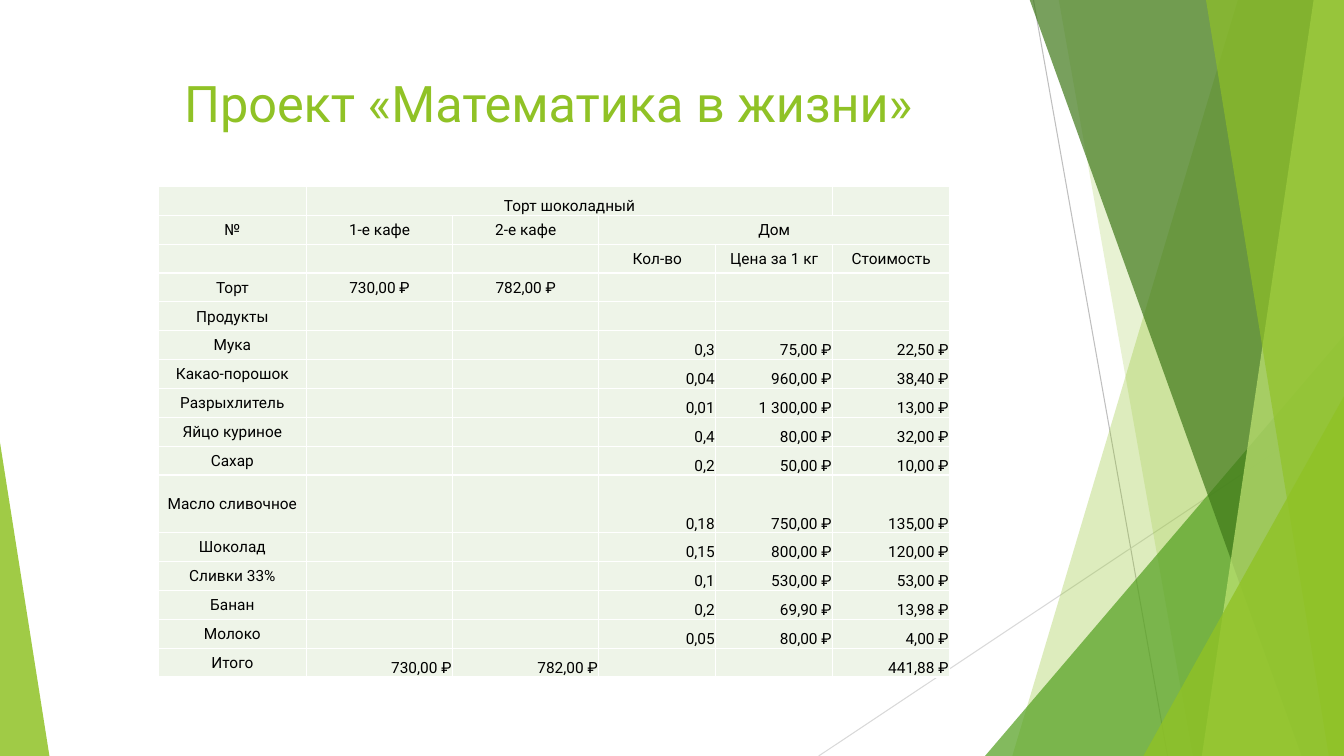
from dataclasses import dataclass

from lxml.etree import SubElement as Sub
from pptx import Presentation
from pptx.dml.color import RGBColor as RGB
from pptx.enum.shapes import MSO_CONNECTOR as Conn, MSO_SHAPE as Kind
from pptx.enum.text import MSO_ANCHOR as Anchor, PP_ALIGN as Align
from pptx.oxml.ns import qn
from pptx.util import Inches, Pt


@dataclass(frozen=True)
class Theme:
    font: str = "Roboto"
    title: int = 36
    body: int = 11
    green: str = "90C226"
    leaf: str = "54A021"
    dark: str = "3F7819"
    lime: str = "C0E474"
    cell: str = "EEF4E8"
    white: str = "FFFFFF"
    ink: str = "000000"
    gray: str = "BFBFBF"
    pale: str = "D9D9D9"


T = Theme()
WIDE, HIGH, TOP = 13.33, 7.5, -0.01

# Start, end, colour
LINES = [
    ((10.25, 0), (11.58, HIGH), T.gray),
    ((WIDE, 4.03), (8.12, HIGH), T.pale),
]
# Back to front: a band is (top x, bottom x, colour, opacity) and runs to the
# right edge; a wedge is (left, top, width, apex, colour, opacity)
DECOR = [
    (12.28, 10.04, T.green, 30),
    (10.5, 11.83, T.green, 20),
    (9.77, 3.33, 3.56, 1, T.leaf, 72),
    (10.21, 12.91, T.dark, 70),
    (13.03, 11.92, T.lime, 70),
    (11.96, 13.18, T.green, 65),
    (11.34, 3.93, 1.99, 1, T.green, 80),
    (0, 4.39, 0.49, 0, T.green, 85),
]

COLS = [1.47, 1.45, 1.45, 1.16, 1.16, 1.16]
PITCH = 4.87 / 17  # sixteen rows, one of them double
TALL = 10
FIRST = 5  # first row of goods
GOODS = [
    ("Мука", "0,3", "75,00 ₽", "22,50 ₽"),
    ("Какао-порошок", "0,04", "960,00 ₽", "38,40 ₽"),
    ("Разрыхлитель", "0,01", "1 300,00 ₽", "13,00 ₽"),
    ("Яйцо куриное", "0,4", "80,00 ₽", "32,00 ₽"),
    ("Сахар", "0,2", "50,00 ₽", "10,00 ₽"),
    ("Масло сливочное", "0,18", "750,00 ₽", "135,00 ₽"),
    ("Шоколад", "0,15", "800,00 ₽", "120,00 ₽"),
    ("Сливки 33%", "0,1", "530,00 ₽", "53,00 ₽"),
    ("Банан", "0,2", "69,90 ₽", "13,98 ₽"),
    ("Молоко", "0,05", "80,00 ₽", "4,00 ₽"),
]
ROWS = [
    ("", "Торт шоколадный", "", "", "", ""),
    ("№", "1-е кафе", "2-е кафе", "Дом", "", ""),
    ("", "", "", "Кол-во", "Цена за 1 кг", "Стоимость"),
    ("Торт", "730,00 ₽", "782,00 ₽", "", "", ""),
    ("Продукты", "", "", "", "", ""),
    *[(name, "", "", *nums) for name, *nums in GOODS],
    ("Итого", "730,00 ₽", "782,00 ₽", "", "", "441,88 ₽"),
]
SPANS = [((0, 1), (0, 4)), ((1, 3), (1, 5))]


def apply(obj, **vals):
    for key, val in vals.items():
        setattr(obj, key, val)


def write(para, text, size, color, align):
    para.alignment = align
    if not text:
        Sub(para._p, qn("a:endParaRPr"), sz=str(size * 100))
        return
    run = para.add_run()
    run.text = text
    apply(run.font, name=T.font, size=Pt(size))
    run.font.color.rgb = RGB.from_string(color)


def add_line(slide, start, end, color):
    ends = [Inches(v) for v in (*start, *end)]
    line = slide.shapes.add_connector(Conn.STRAIGHT, *ends)
    line.line.width = Pt(0.75)
    line.line.color.rgb = RGB.from_string(color)
    Sub(line._element.spPr, qn("a:effectLst"))


def paint(shape, color, alpha):
    shape.shadow.inherit = False
    shape.line.fill.background()
    shape.fill.solid()
    shape.fill.fore_color.rgb = RGB.from_string(color)
    tint = shape._element.spPr.find(qn("a:solidFill"))[0]
    Sub(tint, qn("a:alpha"), val=str(alpha * 1000))


def add_band(slide, top, base, color, alpha):
    dots = [(top, TOP), (WIDE, TOP), (WIDE, HIGH), (base, HIGH)]
    dots = [(Inches(x), Inches(y)) for x, y in dots]
    form = slide.shapes.build_freeform(*dots[0])
    form.add_line_segments(dots[1:], close=True)
    paint(form.convert_to_shape(), color, alpha)


def add_wedge(slide, left, top, width, apex, color, alpha):
    box = [Inches(v) for v in (left, top, width, HIGH - top)]
    wedge = slide.shapes.add_shape(Kind.ISOSCELES_TRIANGLE, *box)
    wedge.adjustments[0] = apex
    paint(wedge, color, alpha)


def add_title(slide, text):
    box = [Inches(v) for v in (0.74, 0.67, 9.4, 1.44)]
    frame = slide.shapes.add_textbox(*box).text_frame
    apply(frame, word_wrap=True, vertical_anchor=Anchor.TOP)
    write(frame.paragraphs[0], text, T.title, T.green, Align.CENTER)


def style_cell(cell, text, align, anchor):
    edge = Inches(0.01)
    apply(cell, margin_left=edge, margin_right=edge, margin_top=edge,
          margin_bottom=0, vertical_anchor=anchor)
    props = cell._tc.get_or_add_tcPr()
    for side in ("lnL", "lnR", "lnT", "lnB"):
        rim = Sub(props, qn(f"a:{side}"), w=str(Pt(1)))
        Sub(Sub(rim, qn("a:solidFill")), qn("a:srgbClr"), val=T.white)
    cell.fill.solid()
    cell.fill.fore_color.rgb = RGB.from_string(T.cell)
    write(cell.text_frame.paragraphs[0], text, T.body, T.ink, align)


def add_costs(slide):
    box = [Inches(v) for v in (1.57, 1.85, sum(COLS), PITCH * 17)]
    table = slide.shapes.add_table(len(ROWS), len(COLS), *box).table
    apply(table, first_row=False, horz_banding=False)
    for col, width in zip(table.columns, COLS):
        col.width = Inches(width)
    for r, row in enumerate(ROWS):
        table.rows[r].height = Inches(PITCH * (2 if r == TALL else 1))
        for c, text in enumerate(row):
            money = r >= FIRST and c > 0
            align = Align.RIGHT if money else Align.CENTER
            anchor = Anchor.BOTTOM if money or r == 0 else Anchor.MIDDLE
            style_cell(table.cell(r, c), text, align, anchor)
    for start, end in SPANS:
        table.cell(*start).merge(table.cell(*end))


def main():
    deck = Presentation()
    apply(deck, slide_width=Inches(WIDE), slide_height=Inches(HIGH))
    slide = deck.slides.add_slide(deck.slide_layouts[6])
    # Backdrop
    for line in LINES:
        add_line(slide, *line)
    for part in DECOR:
        add = add_band if len(part) == 4 else add_wedge
        add(slide, *part)
    # Content
    add_title(slide, "Проект «Математика в жизни»")
    add_costs(slide)
    deck.save("out.pptx")


if __name__ == "__main__":
    main()
